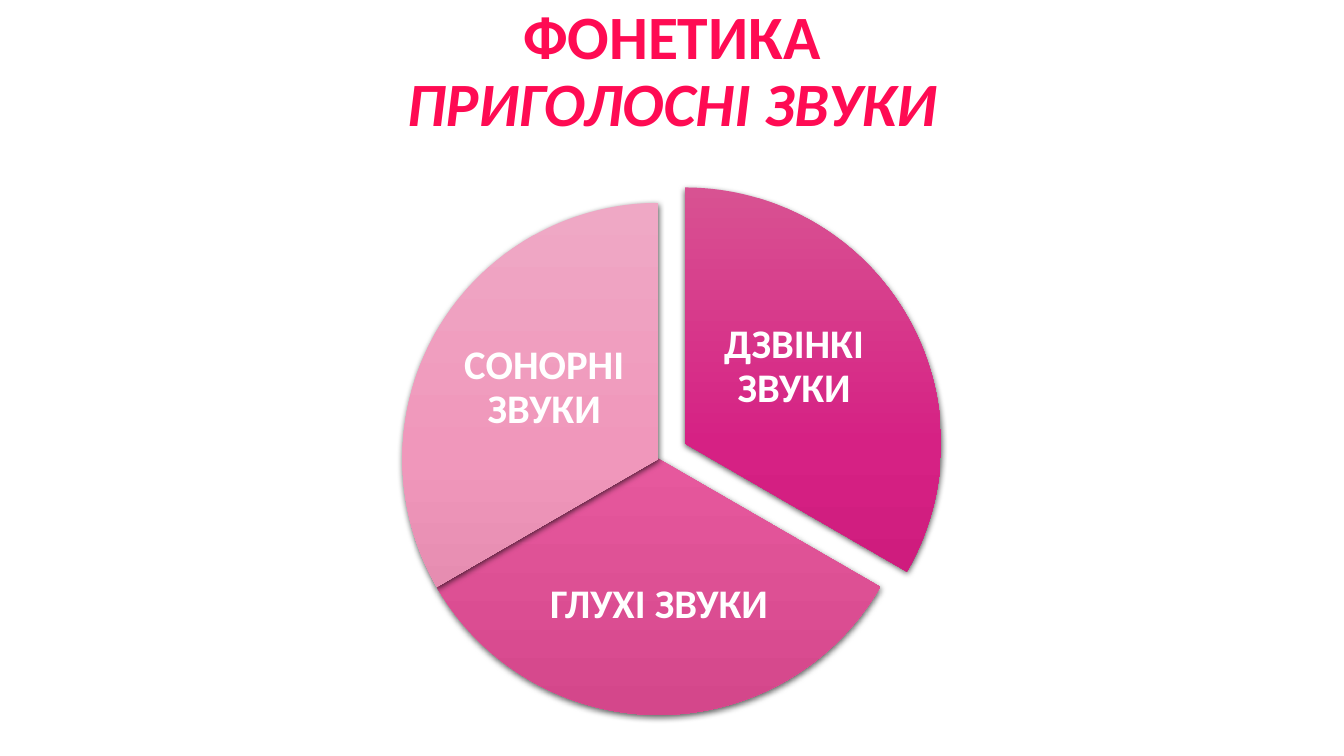
import copy

import pptx
import pptx.dml.color
import pptx.enum.shapes
import pptx.enum.text
import pptx.oxml
import pptx.oxml.ns
import pptx.util

Pt = pptx.util.Pt
RGBColor = pptx.dml.color.RGBColor

TITLE_RED = RGBColor(0xFF, 0x0B, 0x53)
WHITE = RGBColor(0xFF, 0xFF, 0xFF)
VOICED = (RGBColor(0xD8, 0x52, 0x92), RGBColor(0xD6, 0x21, 0x84), RGBColor(0xC6, 0x16, 0x76))
VOICELESS = (RGBColor(0xE4, 0x74, 0xA8), RGBColor(0xE6, 0x58, 0x9D), RGBColor(0xD4, 0x47, 0x8B))
SONORANT = (RGBColor(0xEF, 0xA8, 0xC5), RGBColor(0xF0, 0x97, 0xBB), RGBColor(0xDB, 0x80, 0xA6))

SHADOW = (
    f'<a:outerShdw {pptx.oxml.ns.nsdecls("a")} blurRad="57150" dist="19050" '
    'dir="5400000" algn="ctr" rotWithShape="0">'
    '<a:srgbClr val="000000"><a:alpha val="63000"/></a:srgbClr></a:outerShdw>'
)
DIAMETER = 365.76
SLICE_ANGLE = 120
UNITS_PER_DEGREE = 0.6


def add_run(paragraph, text, size, color, font="Calibri", bold=True, italic=False):
    run = paragraph.add_run()
    run.text = text
    run.font.name = font
    run.font.size = Pt(size)
    run.font.bold = bold
    run.font.italic = italic
    run.font.color.rgb = color


class PieSlide:
    font = "Calibri"
    title_size = 44
    label_size = 29
    line_spacing = 0.9

    def __init__(self, presentation):
        self.slide = presentation.slides.add_slide(presentation.slide_layouts[6])

    def text_box(self, left, top, width, height, horizontal_inset=7.2, vertical_inset=3.6):
        shape = self.slide.shapes.add_textbox(Pt(left), Pt(top), Pt(width), Pt(height))
        frame = shape.text_frame
        frame.word_wrap = True
        frame.vertical_anchor = pptx.enum.text.MSO_ANCHOR.MIDDLE
        frame.margin_left = frame.margin_right = Pt(horizontal_inset)
        frame.margin_top = frame.margin_bottom = Pt(vertical_inset)
        paragraph = frame.paragraphs[0]
        paragraph.alignment = pptx.enum.text.PP_ALIGN.CENTER
        paragraph.line_spacing = self.line_spacing
        return paragraph

    def title(self, heading, subheading):
        paragraph = self.text_box(66, 0, 828, 104.4)
        add_run(paragraph, heading, self.title_size, TITLE_RED, font=self.font)
        paragraph.add_line_break()
        add_run(paragraph, subheading, self.title_size, TITLE_RED, font=self.font, italic=True)

    def label(self, text, left, top, width, height):
        paragraph = self.text_box(left, top, width, height, 2.88, 2.88)
        add_run(paragraph, text, self.label_size, WHITE, font=self.font)

    def slice(self, left, top, start_angle, colors):
        shape = self.slide.shapes.add_shape(
            pptx.enum.shapes.MSO_SHAPE.PIE, Pt(left), Pt(top), Pt(DIAMETER), Pt(DIAMETER)
        )
        shape.adjustments[0] = start_angle * UNITS_PER_DEGREE
        shape.adjustments[1] = (start_angle + SLICE_ANGLE) % 360 * UNITS_PER_DEGREE
        shape.line.fill.background()
        shape.fill.gradient()
        shape.fill.gradient_angle = 270
        stop_list = shape.element.xpath(".//a:gsLst")[0]
        stop_list.insert(1, copy.deepcopy(stop_list[0]))
        for stop, position, color in zip(shape.fill.gradient_stops, (0, 0.5, 1), colors):
            stop.position = position
            stop.color.rgb = color
        shape.shadow.inherit = False
        effects = shape.element.xpath("./p:spPr/a:effectLst")[0]
        effects.append(pptx.oxml.parse_xml(SHADOW))


def main():
    presentation = pptx.Presentation()
    presentation.slide_width = Pt(960)
    presentation.slide_height = Pt(540)

    page = PieSlide(presentation)
    page.title("ФОНЕТИКА", "ПРИГОЛОСНІ ЗВУКИ")
    sounds = (
        ("ДЗВІНКІ ЗВУКИ", VOICED, (306.5, 133.9), 270, (505.4, 201.6, 123.8, 121.7)),
        ("ГЛУХІ ЗВУКИ", VOICELESS, (287.5, 144.9), 30, (388.1, 375.8, 165.6, 113)),
        ("СОНОРНІ ЗВУКИ", SONORANT, (287.5, 144.9), 150, (326.9, 216.7, 123.8, 121.7)),
    )
    for text, colors, corner, start_angle, label_area in sounds:
        page.slice(*corner, start_angle, colors)
        page.label(text, *label_area)

    presentation.save("out.pptx")


if __name__ == "__main__":
    main()
